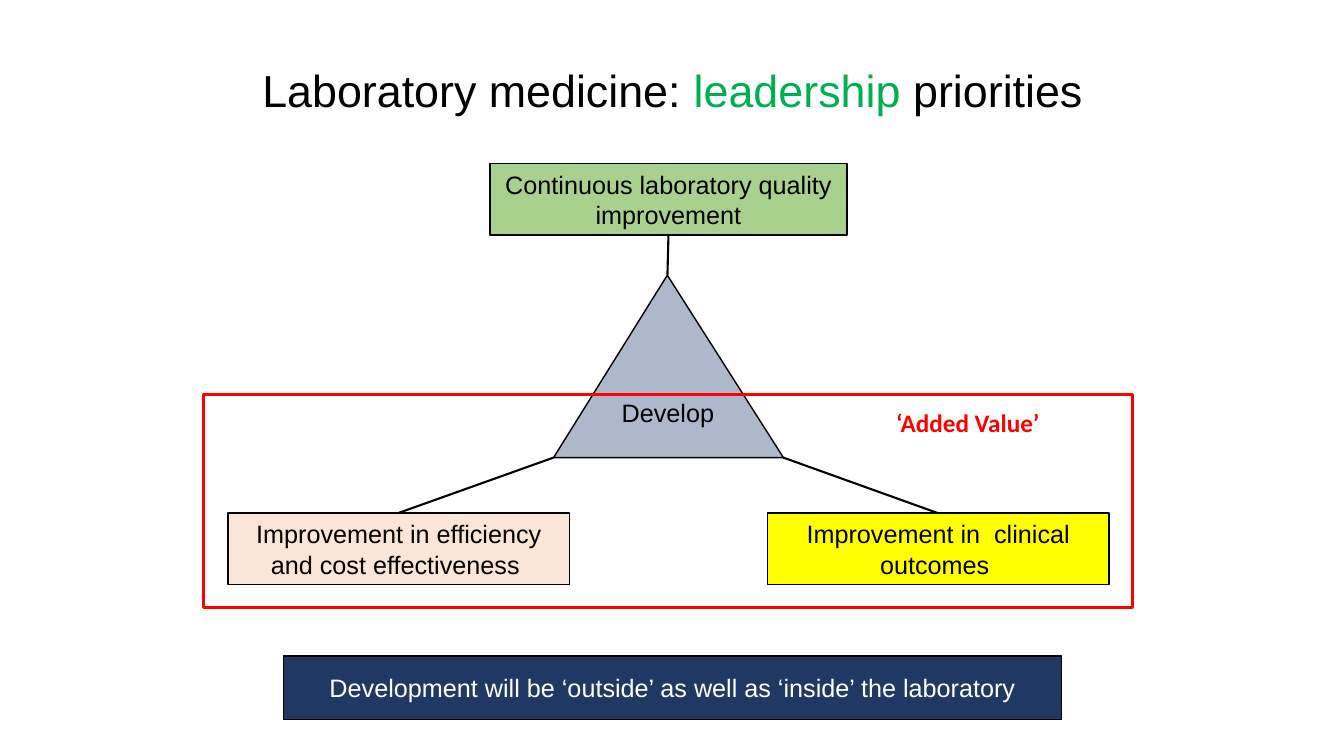
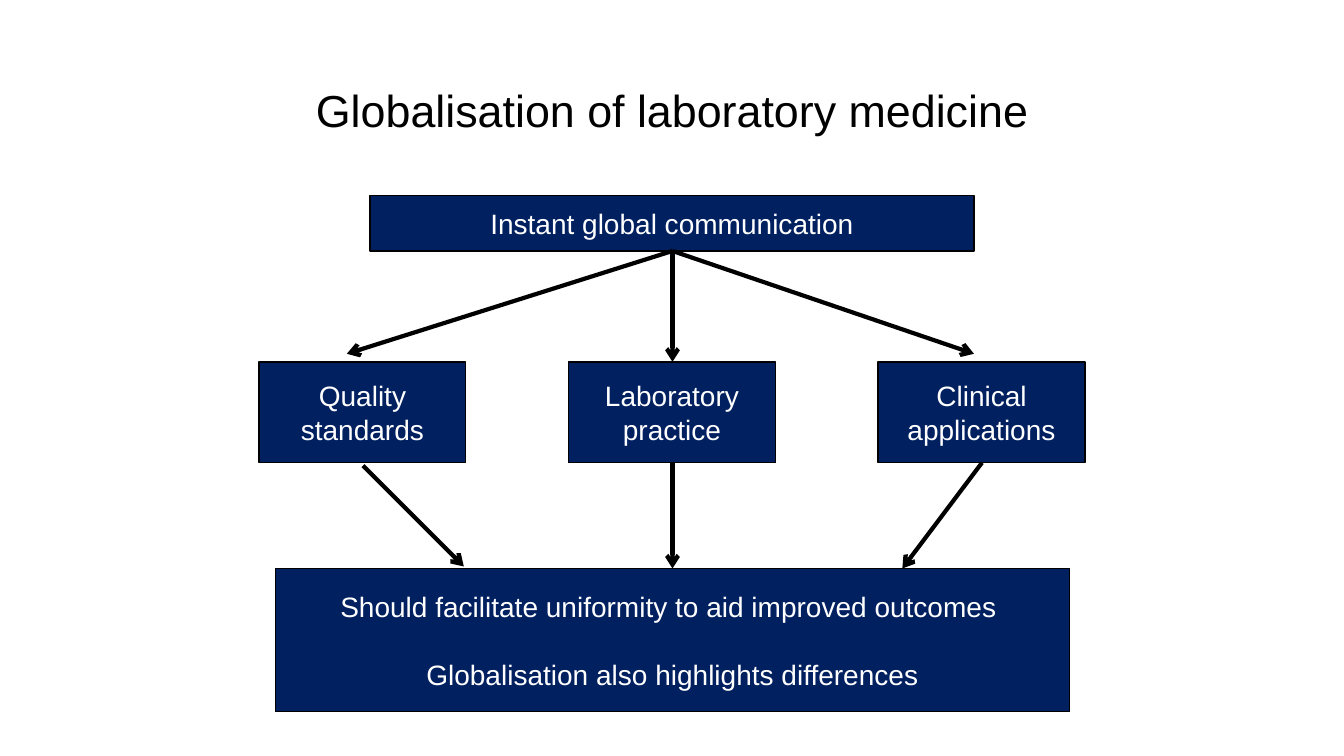
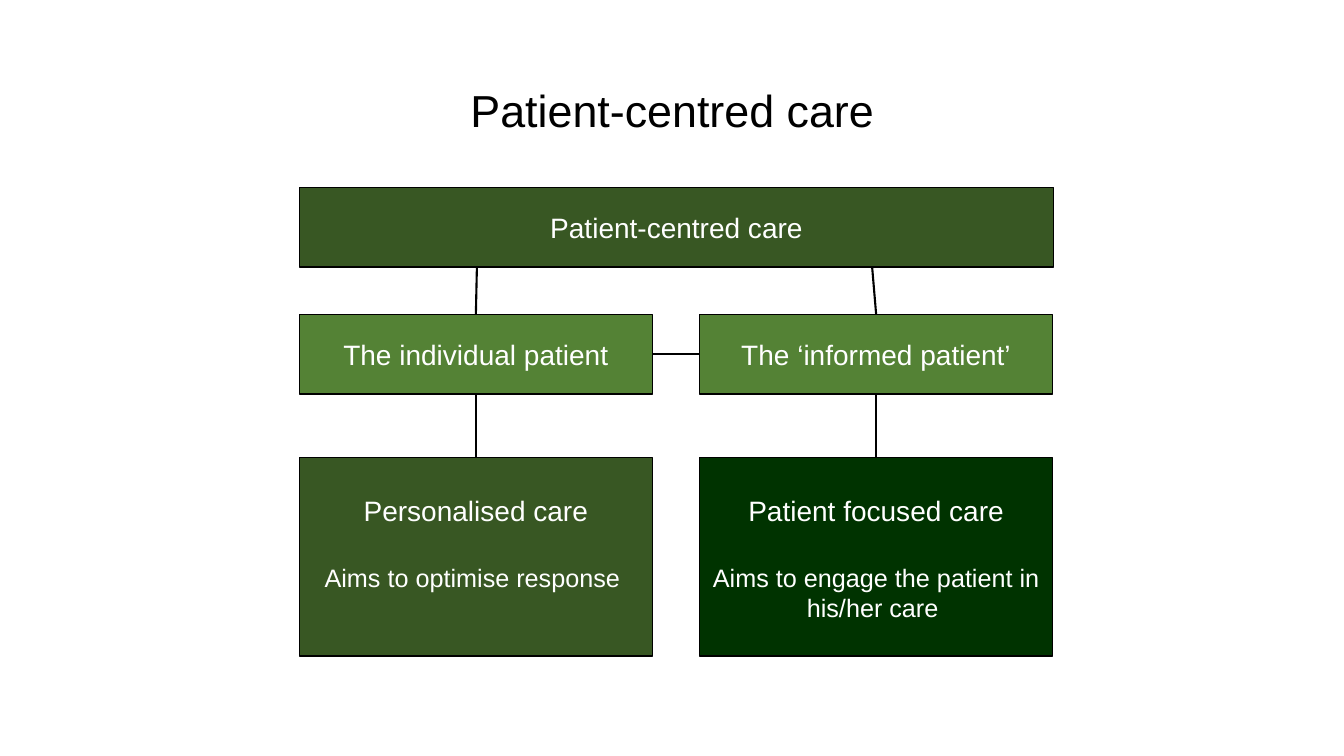
from dataclasses import dataclass

from lxml import etree
from pptx import Presentation
from pptx.dml.color import RGBColor
from pptx.enum.shapes import MSO_CONNECTOR, MSO_SHAPE
from pptx.enum.text import MSO_ANCHOR, PP_ALIGN
from pptx.oxml.ns import qn
from pptx.util import Inches, Pt

RECTANGLE = MSO_SHAPE.RECTANGLE
TRIANGLE = MSO_SHAPE.ISOSCELES_TRIANGLE
STRAIGHT = MSO_CONNECTOR.STRAIGHT
CENTER, LEFT = PP_ALIGN.CENTER, PP_ALIGN.LEFT
MIDDLE, TOP = MSO_ANCHOR.MIDDLE, MSO_ANCHOR.TOP


@dataclass(frozen=True)
class Theme:
    black: str = "000000"
    white: str = "FFFFFF"
    red: str = "FF0000"
    yellow: str = "FFFF00"
    accent: str = "00B050"
    slate: str = "ADB9CA"
    pale_green: str = "A9D18E"
    peach: str = "FBE5D6"
    dark_blue: str = "203864"
    navy: str = "002060"
    olive: str = "385723"
    leaf: str = "548235"
    forest: str = "003300"
    font: str = "Arial"
    caption_font: str = "Calibri"
    title_size: int = 32
    large: int = 20
    body: int = 18
    paragraph_gap: int = 25
    outline: float = 1
    link: float = 1.5
    frame: float = 2.25
    arrow: float = 3


THEME = Theme()


class Deck:
    """Draws styled elements on the current slide."""

    def __init__(self, theme):
        self.theme = theme
        self.presentation = Presentation()
        self.presentation.slide_width = Inches(13.33)
        self.presentation.slide_height = Inches(7.5)
        self.slide = None

    def new_slide(self, title_runs, title_top=0.4):
        """Start a slide with a title made of (text, colour) runs."""
        layout = self.presentation.slide_layouts[6]
        self.slide = self.presentation.slides.add_slide(layout)
        title = self.slide.shapes.add_textbox(
            Inches(0.92), Inches(title_top), Inches(11.5), Inches(1.45))
        frame = title.text_frame
        frame.word_wrap = True
        frame.vertical_anchor = MIDDLE
        paragraph = frame.paragraphs[0]
        paragraph.alignment = CENTER
        paragraph.line_spacing = 0.9
        for words, colour in title_runs:
            self.add_run(paragraph, words, self.theme.title_size, colour)

    def add_run(self, paragraph, words, size, colour, font=None, bold=False):
        """Append one formatted run."""
        run = paragraph.add_run()
        run.text = words
        run.font.name = font or self.theme.font
        run.font.size = Pt(size)
        run.font.bold = bold
        run.font.color.rgb = RGBColor.from_string(colour)

    def box(self, place, fill, lines=(), size=None, colour=None, gap=0,
            kind=RECTANGLE, outline=None, outline_width=None, top_inset=None):
        """Add a shape; a line is a string or a (string, size) pair."""
        theme = self.theme
        shape = self.slide.shapes.add_shape(kind, *map(Inches, place))
        shape.shadow.inherit = False
        if fill:
            shape.fill.solid()
            shape.fill.fore_color.rgb = RGBColor.from_string(fill)
        else:
            shape.fill.background()
        shape.line.color.rgb = RGBColor.from_string(outline or theme.black)
        shape.line.width = Pt(outline_width or theme.outline)
        frame = shape.text_frame
        frame.word_wrap = True
        frame.vertical_anchor = MIDDLE
        if top_inset is not None:
            frame.vertical_anchor = TOP
            frame.margin_top = Inches(top_inset)
        for index, line in enumerate(lines):
            words, line_size = (line, size or theme.body) if isinstance(line, str) else line
            paragraph = frame.add_paragraph() if index else frame.paragraphs[0]
            paragraph.alignment = CENTER
            if index and gap:
                paragraph.space_before = Pt(gap)
            self.add_run(paragraph, words, line_size, colour or theme.black)
        return shape

    def caption(self, place, words, colour):
        """Add a bold unwrapped caption."""
        label = self.slide.shapes.add_textbox(*map(Inches, place))
        label.text_frame.word_wrap = False
        paragraph = label.text_frame.paragraphs[0]
        paragraph.alignment = LEFT
        self.add_run(paragraph, words, self.theme.body, colour,
                     self.theme.caption_font, True)

    def line(self, start, end, arrow=False):
        """Add a straight link, with an arrowhead at its end if asked."""
        link = self.slide.shapes.add_connector(
            STRAIGHT, *map(Inches, (*start, *end)))
        link.line.color.rgb = RGBColor.from_string(self.theme.black)
        link.line.width = Pt(self.theme.arrow if arrow else self.theme.link)
        if arrow:
            outline = link.line._get_or_add_ln()
            etree.SubElement(outline, qn("a:tailEnd")).set("type", "arrow")
        etree.SubElement(link._element.spPr, qn("a:effectLst"))


def leadership_slide(deck):
    """Build the leadership priorities slide."""
    theme = deck.theme
    deck.new_slide([("Laboratory medicine: ", theme.black),
                    ("leadership", theme.accent),
                    (" priorities", theme.black)], title_top=0.2)
    develop = deck.box((5.49, 2.73, 2.28, 1.81), theme.slate, ["Develop"], kind=TRIANGLE)
    develop.adjustments[0] = 0.495
    for place, fill, words in (
        ((4.86, 1.62, 3.54, 0.71), theme.pale_green,
         "Continuous laboratory quality improvement"),
        ((2.26, 5.09, 3.39, 0.71), theme.peach,
         "Improvement in efficiency and cost effectiveness "),
        ((7.61, 5.09, 3.39, 0.71), theme.yellow,
         "Improvement in  clinical outcomes "),
    ):
        deck.box(place, fill, [words])
    for corner, priority in (((5.49, 4.54), (3.95, 5.09)),
                             ((7.77, 4.54), (9.3, 5.09)),
                             ((6.63, 2.33), (6.62, 2.73))):
        deck.line(corner, priority)
    deck.box((2.81, 6.51, 7.72, 0.63), theme.dark_blue,
             ["Development will be ‘outside’ as well as ‘inside’ the laboratory"],
             colour=theme.white)
    deck.box((2.02, 3.91, 9.21, 2.12), None,
             outline=theme.red, outline_width=theme.frame)
    deck.caption((8.79, 3.99, 1.64, 0.4), "‘Added Value’", theme.red)


def globalisation_slide(deck):
    """Build the globalisation slide."""
    theme = deck.theme
    deck.new_slide([("Globalisation of laboratory medicine", theme.black)])
    style = {"fill": theme.navy, "size": theme.large, "colour": theme.white}
    deck.box((3.67, 1.94, 5.99, 0.55), lines=["Instant global communication"], **style)
    areas = (["Quality", "standards"], ["Laboratory", "practice"], ["Clinical applications"])
    for column, area in enumerate(areas):
        deck.box((2.57 + 3.07 * column, 3.59, 2.05, 1), lines=area, **style)
    deck.box((2.73, 5.64, 7.88, 1.42),
             lines=["Should facilitate uniformity to aid improved outcomes ",
                    "Globalisation also highlights differences"],
             gap=theme.paragraph_gap, **style)
    source = (6.67, 2.49)
    for start, end in ((source, (3.44, 3.51)), (source, (9.66, 3.51)),
                       (source, (6.67, 3.59)), ((3.6, 4.62), (4.6, 5.62)),
                       ((9.74, 4.59), (8.95, 5.64)), ((6.67, 4.59), (6.67, 5.64))):
        deck.line(start, end, arrow=True)


def patient_slide(deck):
    """Build the patient-centred care slide."""
    theme = deck.theme
    deck.new_slide([("Patient-centred care", theme.black)])
    style = {"size": theme.large, "colour": theme.white}
    deck.box((2.97, 1.86, 7.48, 0.79), theme.olive, ["Patient-centred care"], **style)
    branches = (
        (2.97, 4.73, "The individual patient", theme.olive,
         "Personalised care", "Aims to optimise response "),
        (6.94, 8.65, "The ‘informed patient’", theme.forest,
         "Patient focused care", "Aims to engage the patient in his/her care "),
    )
    width = 3.5
    for left, joint, patient, care_fill, care, aim in branches:
        middle = left + width / 2
        deck.box((left, 3.12, width, 0.79), theme.leaf, [patient], **style)
        deck.box((left, 4.54, width, 1.97), care_fill, [care, (aim, theme.body)],
                 gap=theme.paragraph_gap, top_inset=0.36, **style)
        deck.line((middle, 3.12), (joint, 2.65))
        deck.line((middle, 3.91), (middle, 4.54))
    deck.line((6.47, 3.51), (6.94, 3.51))


def main():
    """Build and save the presentation."""
    deck = Deck(THEME)
    leadership_slide(deck)
    globalisation_slide(deck)
    patient_slide(deck)
    deck.presentation.save("out.pptx")


if __name__ == "__main__":
    main()
